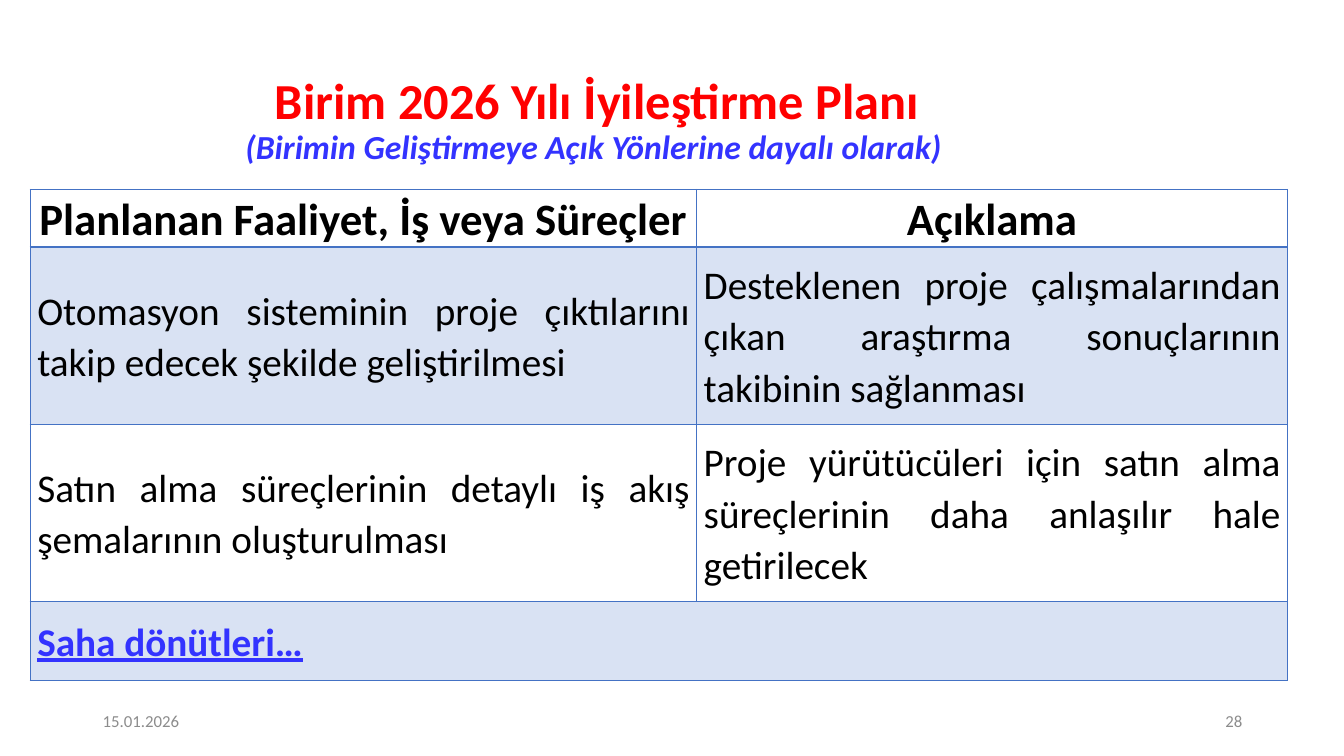
"""Build the 2026 improvement plan slide with its activity table."""
import lxml.etree
import pptx
import pptx.dml.color
import pptx.enum.text
import pptx.oxml.ns
import pptx.util

Inches = pptx.util.Inches
Pt = pptx.util.Pt
RGBColor = pptx.dml.color.RGBColor
ALIGN = pptx.enum.text.PP_ALIGN
MIDDLE = pptx.enum.text.MSO_ANCHOR.MIDDLE
qn = pptx.oxml.ns.qn

RED = RGBColor(0xFF, 0x00, 0x00)
BLUE = RGBColor(0x33, 0x33, 0xFF)
BLACK = RGBColor(0x00, 0x00, 0x00)
GRAY = RGBColor(0x8C, 0x8C, 0x8C)
ACCENT = RGBColor(0x44, 0x72, 0xC4)


def style_run(run, size, color, bold=False):
    run.font.name = "Calibri"
    run.font.size = Pt(size)
    run.font.color.rgb = color
    run.font.bold = bold


def add_borders(cell, widths):
    properties = cell._tc.get_or_add_tcPr()
    for position, (side, width) in enumerate(widths.items()):
        line = lxml.etree.Element(qn(f"a:ln{side}"), w=str(Pt(width)))
        fill = lxml.etree.SubElement(line, qn("a:solidFill"))
        lxml.etree.SubElement(fill, qn("a:srgbClr"), val=str(ACCENT))
        properties.insert(position, line)


presentation = pptx.Presentation()
presentation.slide_width = Inches(13.33)
presentation.slide_height = Inches(7.5)
slide = presentation.slides.add_slide(presentation.slide_layouts[5])

title = slide.shapes.title
title.left, title.top = Inches(0.3), Inches(0.78)
title.width, title.height = Inches(11.25), Inches(0.84)
title.text_frame.text = (
    "Birim 2026 Yılı İyileştirme Planı\v"
    "(Birimin Geliştirmeye Açık Yönlerine dayalı olarak) "
)
title.text_frame.vertical_anchor = MIDDLE
title.text_frame.auto_size = pptx.enum.text.MSO_AUTO_SIZE.NONE
heading = title.text_frame.paragraphs[0]
heading.alignment = ALIGN.CENTER
heading.line_spacing = 0.9
main_run, subtitle_run = heading.runs
style_run(main_run, 36, RED, bold=True)
style_run(subtitle_run, 24, BLUE, bold=True)
subtitle_run.font.italic = True

for left, text, alignment in [(0.92, "15.01.2026", ALIGN.LEFT), (9.42, "28", ALIGN.RIGHT)]:
    footer = slide.shapes.add_textbox(Inches(left), Inches(6.95), Inches(3), Inches(0.4))
    footer.text_frame.word_wrap = True
    footer.text_frame.vertical_anchor = MIDDLE
    footer.text_frame.text = text
    paragraph = footer.text_frame.paragraphs[0]
    paragraph.alignment = alignment
    style_run(paragraph.runs[0], 12, GRAY)

plan_rows = [
    ("Planlanan Faaliyet, İş veya Süreçler", "Açıklama"),
    (
        "Otomasyon sisteminin proje çıktılarını takip edecek şekilde geliştirilmesi",
        "Desteklenen proje çalışmalarından çıkan araştırma sonuçlarının takibinin sağlanması",
    ),
    (
        "Satın alma süreçlerinin detaylı iş akış şemalarının oluşturulması",
        "Proje yürütücüleri için satın alma süreçlerinin daha anlaşılır hale getirilecek",
    ),
    ("Saha dönütleri…", ""),
]
row_heights = [0.49, 1.76, 1.76, 0.78]
row_styles = [
    (ALIGN.CENTER, 32, BLACK, True),
    (ALIGN.JUSTIFY, 28, BLACK, False),
    (ALIGN.JUSTIFY, 28, BLACK, False),
    (ALIGN.LEFT, 28, BLUE, True),
]

table = slide.shapes.add_table(
    len(plan_rows), 2, Inches(0.3), Inches(1.88), Inches(12.47), Inches(sum(row_heights))
).table
table.horz_banding = False
for column, width in zip(table.columns, [6.61, 5.86]):
    column.width = Inches(width)
table.cell(3, 0).merge(table.cell(3, 1))

for row_index, (texts, height, row_style) in enumerate(zip(plan_rows, row_heights, row_styles)):
    table.rows[row_index].height = Inches(height)
    alignment, size, color, bold = row_style
    for column_index, text in enumerate(texts):
        cell = table.cell(row_index, column_index)
        cell.vertical_anchor = MIDDLE
        cell.margin_left = cell.margin_right = Inches(0.07)
        cell.margin_top = cell.margin_bottom = Inches(0)
        if row_index % 2:
            cell.fill.solid()
            cell.fill.fore_color.rgb = ACCENT
            fill_color = cell._tc.tcPr.find(f".//{qn('a:srgbClr')}")
            lxml.etree.SubElement(fill_color, qn("a:alpha"), val="20000")
        else:
            cell.fill.background()
        top_width = 2 if row_index == 1 else 1
        bottom_width = 2 if row_index == 0 else 1
        add_borders(cell, {"L": 1, "R": 1, "T": top_width, "B": bottom_width})
        if text:
            cell.text_frame.text = text
            paragraph = cell.text_frame.paragraphs[0]
            paragraph.alignment = alignment
            paragraph.line_spacing = 1.07
            style_run(paragraph.runs[0], size, color, bold)

table.cell(3, 0).text_frame.paragraphs[0].runs[0].font.underline = True

presentation.save("out.pptx")
